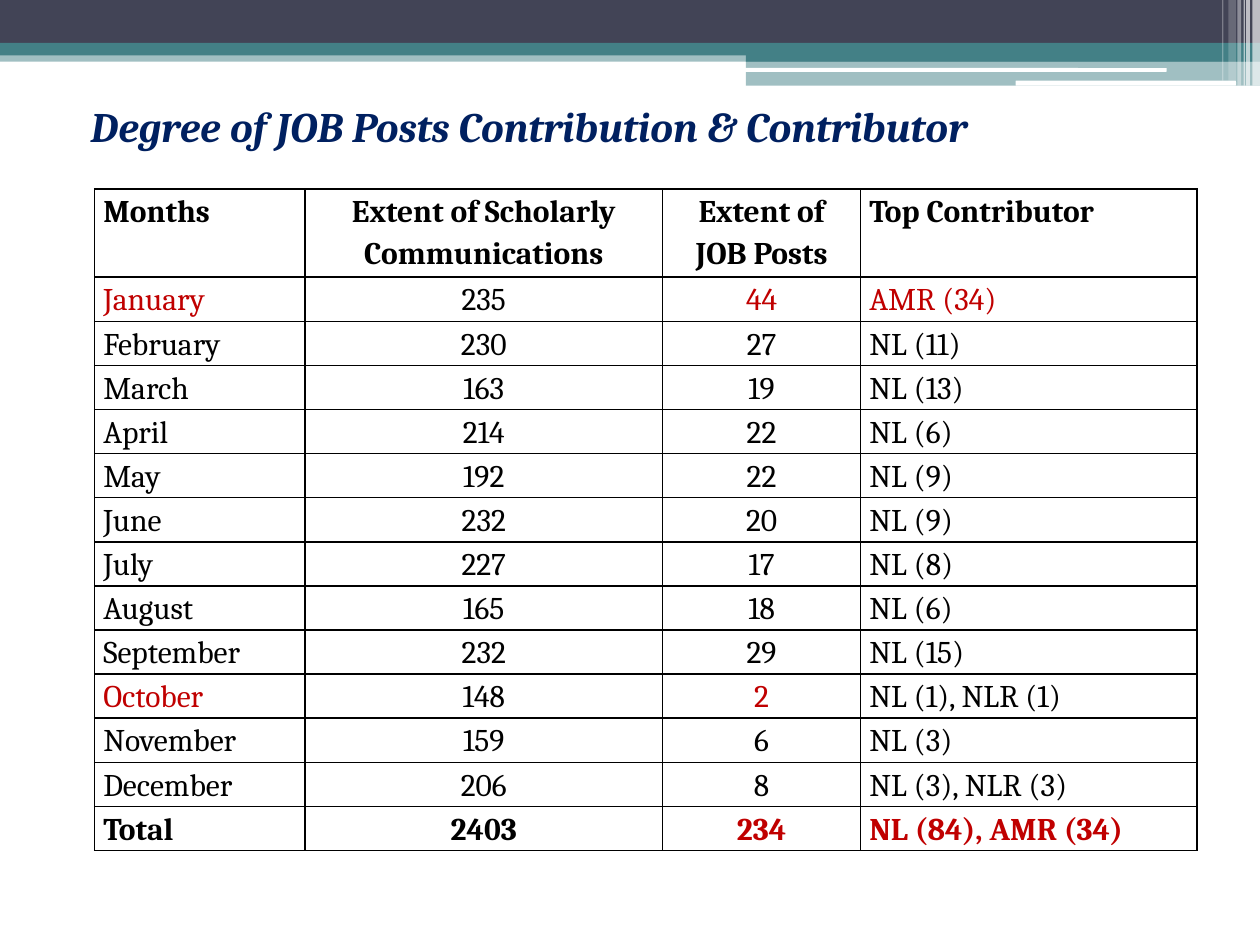
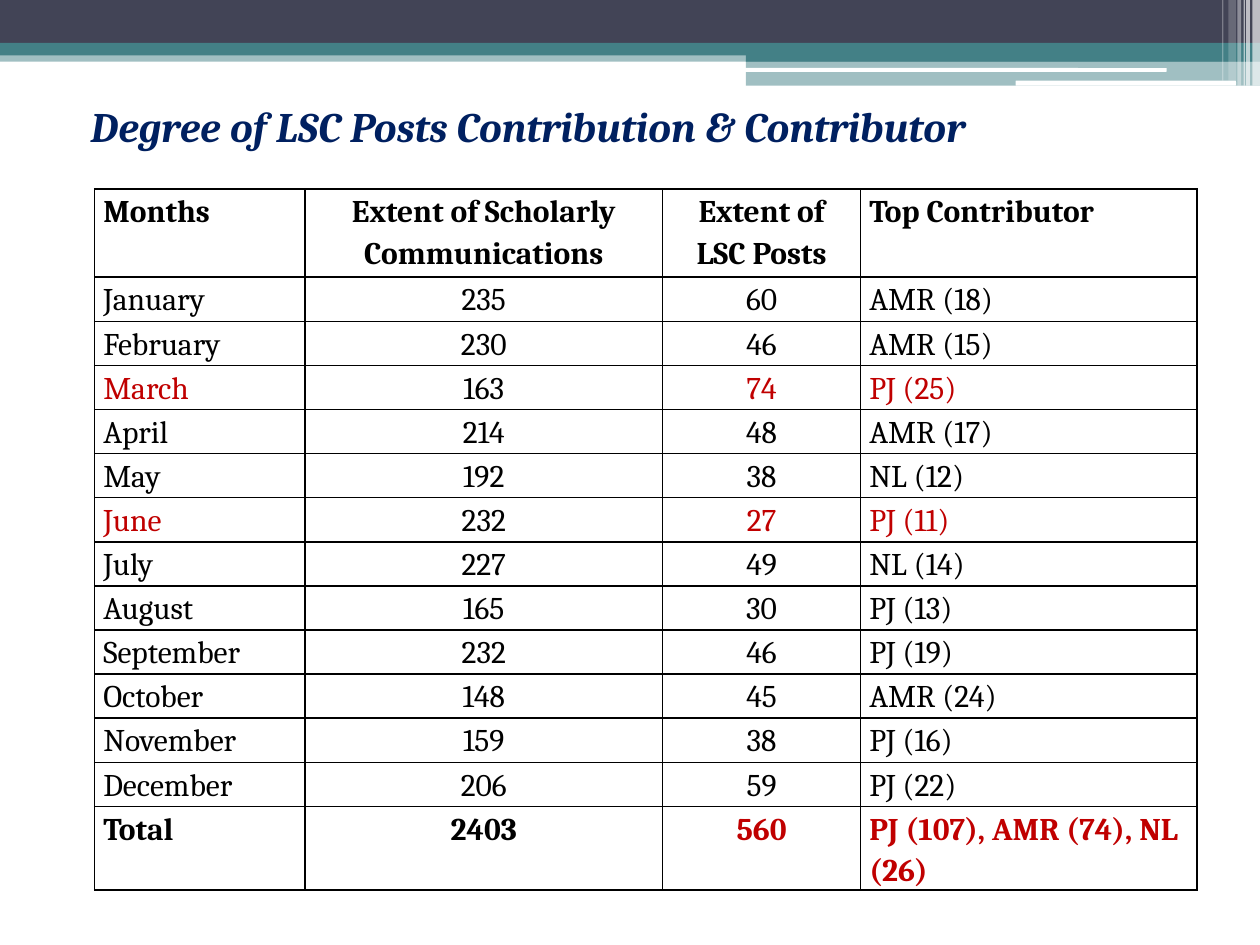
from dataclasses import dataclass

from pptx import Presentation
from pptx.dml.color import RGBColor
from pptx.enum.shapes import MSO_SHAPE as Shape
from pptx.enum.text import MSO_ANCHOR, PP_ALIGN as Align
from pptx.oxml import parse_xml
from pptx.oxml.ns import nsdecls, qn
from pptx.util import Inches, Pt


@dataclass(frozen=True)
class Theme:
    font: str = "Cambria"
    title_size: int = 24
    table_size: int = 18
    title: str = "002060"
    text: str = "000000"
    highlight: str = "C00000"
    slate: str = "424456"
    teal: str = "438086"
    white: str = "FFFFFF"


THEME = Theme()

MONTHS = ["January", "February", "March", "April", "May", "June", "July",
          "August", "September", "October", "November", "December"]
COMMUNICATIONS = [235, 230, 163, 214, 192, 232, 227, 165, 232, 148, 159, 206]

# "highlights" maps a row label to the columns shown in the highlight colour.
REPORTS = [
    {
        "topic": "JOB",
        "posts": [44, 27, 19, 22, 22, 20, 17, 18, 29, 2, 6, 8],
        "contributors": ["AMR (34)", "NL (11)", "NL (13)", "NL (6)", "NL (9)", "NL (9)",
                         "NL (8)", "NL (6)", "NL (15)", "NL (1), NLR (1)", "NL (3)",
                         "NL (3), NLR (3)"],
        "leaders": "NL (84), AMR (34)",
        "highlights": {"January": (0, 2, 3), "October": (0, 2), "Total": (2, 3)},
    },
    {
        "topic": "LSC",
        "posts": [60, 46, 74, 48, 38, 27, 49, 30, 46, 45, 38, 59],
        "contributors": ["AMR (18)", "AMR (15)", "PJ (25)", "AMR (17)", "NL (12)", "PJ (11)",
                         "NL (14)", "PJ (13)", "PJ (19)", "AMR (24)", "PJ (16)", "PJ (22)"],
        "leaders": "PJ (107), AMR (74), NL (26)",
        "highlights": {"March": (0, 2, 3), "June": (0, 2, 3), "Total": (2, 3)},
    },
]

COLUMN_WIDTHS = [1.67, 2.84, 1.57, 2.67]
COLUMN_ALIGNS = [Align.LEFT, Align.CENTER, Align.CENTER, Align.LEFT]
HEADER_HEIGHT, ROW_HEIGHT = 0.7, 0.35

# left, top, width, height, colour, opacity in percent
BANDS = [
    (0, 0.4, 10, 0.09, THEME.teal, 50),
    (0, 0, 10, 0.34, THEME.slate, 100),
    (0, 0.34, 10, 0.1, THEME.teal, 100),
    (5.92, 0.39, 4.08, 0.1, THEME.teal, 100),
    (5.92, 0.48, 4.08, 0.2, THEME.teal, 50),
]
ROUNDED_BARS = [(5.91, 0.54, 3.35, 0.03), (8.06, 0.64, 1.75, 0.04)]
# left, width, height, opacity in percent
STRIPES = [
    (9.94, 0.06, 0.68, 65),
    (9.89, 0.03, 0.68, 65),
    (9.87, 0.01, 0.68, 60),
    (9.82, 0.03, 0.68, 40),
    (9.75, 0.06, 0.64, 20),
    (9.7, 0.01, 0.64, 30),
]


def add_bar(slide, left, top, width, height, color, opacity=100, kind=Shape.RECTANGLE):
    bar = slide.shapes.add_shape(kind, *map(Inches, (left, top, width, height)))
    bar.shadow.inherit = False
    bar.line.fill.background()
    bar.fill.solid()
    bar.fill.fore_color.rgb = RGBColor.from_string(color)
    if opacity < 100:
        color_node = bar._element.spPr.find(".//" + qn("a:srgbClr"))
        color_node.append(parse_xml(f'<a:alpha {nsdecls("a")} val="{opacity * 1000}"/>'))


def add_header_bands(slide):
    for band in BANDS:
        add_bar(slide, *band)
    for bar in ROUNDED_BARS:
        add_bar(slide, *bar, THEME.white, kind=Shape.ROUNDED_RECTANGLE)
    for left, width, height, opacity in STRIPES:
        add_bar(slide, left, 0, width, height, THEME.white, opacity)


def style_font(paragraph, size, color, bold, italic=False):
    for run in paragraph.runs:
        font = run.font
        font.name, font.size = THEME.font, Pt(size)
        font.bold, font.italic = bold, italic
        font.color.rgb = RGBColor.from_string(color)


def set_title(slide, text):
    title = slide.shapes.title
    title.left, title.top, title.width, title.height = map(Inches, (0.62, 0.75, 8.88, 0.6))
    frame = title.text_frame
    frame.text = text
    frame.vertical_anchor = MSO_ANCHOR.TOP
    paragraph = frame.paragraphs[0]
    paragraph.alignment = Align.JUSTIFY
    paragraph.space_before = Pt(3)
    style_font(paragraph, THEME.title_size, THEME.title, bold=True, italic=True)


def set_borders(cell):
    properties = cell._tc.get_or_add_tcPr()
    for side in "LRTB":
        properties.append(parse_xml(
            f'<a:ln{side} {nsdecls("a")} w="{Pt(1)}"><a:solidFill>'
            f'<a:srgbClr val="{THEME.text}"/></a:solidFill></a:ln{side}>'))


def fill_cell(cell, text, align, color, bold):
    cell.margin_left = cell.margin_right = Inches(0.07)
    cell.margin_top = cell.margin_bottom = 0
    set_borders(cell)
    cell.fill.background()
    cell.text_frame.text = str(text)
    paragraph = cell.text_frame.paragraphs[0]
    paragraph.alignment = align
    paragraph.line_spacing = 1.15
    style_font(paragraph, THEME.table_size, color, bold)


def report_rows(report):
    header = ("Months", "Extent of Scholarly Communications",
              f"Extent of {report['topic']} Posts", "Top Contributor")
    total = ("Total", sum(COMMUNICATIONS), sum(report["posts"]), report["leaders"])
    monthly = zip(MONTHS, COMMUNICATIONS, report["posts"], report["contributors"])
    return [header, *monthly, total]


def add_report_table(slide, report):
    rows = report_rows(report)
    height = HEADER_HEIGHT + ROW_HEIGHT * (len(rows) - 1)
    table = slide.shapes.add_table(
        len(rows), len(COLUMN_WIDTHS), Inches(0.75), Inches(1.5),
        Inches(sum(COLUMN_WIDTHS)), Inches(height)).table
    table.first_row = table.horz_banding = False
    for column, width in zip(table.columns, COLUMN_WIDTHS):
        column.width = Inches(width)
    for r, values in enumerate(rows):
        table.rows[r].height = Inches(ROW_HEIGHT if r else HEADER_HEIGHT)
        highlighted = report["highlights"].get(values[0], ())
        bold = r in (0, len(rows) - 1)
        for c, (value, align) in enumerate(zip(values, COLUMN_ALIGNS)):
            color = THEME.highlight if c in highlighted else THEME.text
            fill_cell(table.cell(r, c), value, align, color, bold)


def main():
    deck = Presentation()
    deck.slide_width, deck.slide_height = Inches(10), Inches(7.5)
    title_only = deck.slide_layouts[5]
    for report in REPORTS:
        slide = deck.slides.add_slide(title_only)
        add_header_bands(slide)
        set_title(slide, f"Degree of {report['topic']} Posts Contribution & Contributor")
        add_report_table(slide, report)
    deck.save("out.pptx")


if __name__ == "__main__":
    main()
